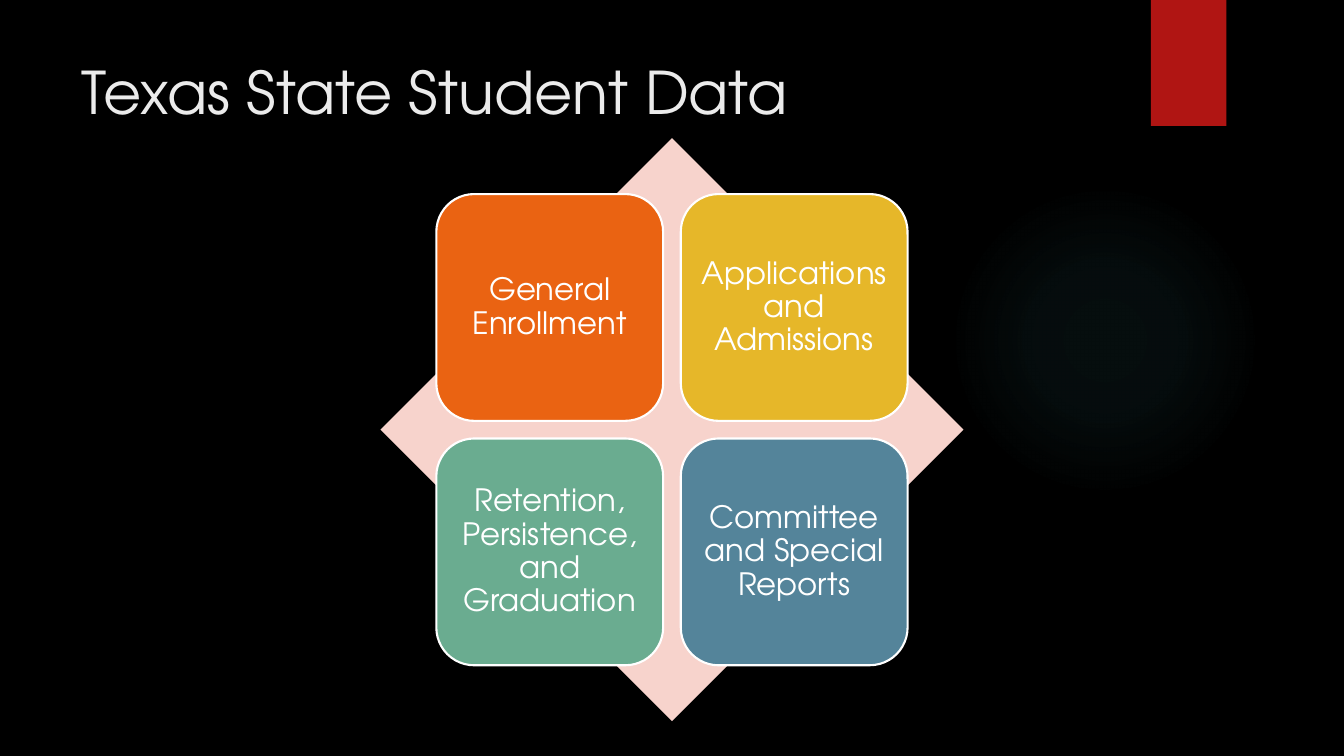
import lxml.etree
import pptx
import pptx.dml.color
import pptx.enum.shapes
import pptx.enum.text
import pptx.oxml
import pptx.oxml.ns
import pptx.util

COLUMNS, ROWS = 160, 90
SHAPES = pptx.enum.shapes.MSO_SHAPE


def color(hex_string):
    return pptx.dml.color.RGBColor.from_string(hex_string)


class SlideBuilder:
    font_name = "TeX Gyre Adventor"
    title_color = "EBEBEB"
    tile_text_color = "FFFFFF"

    def __init__(self, presentation, background):
        self.column = presentation.slide_width / COLUMNS
        self.row = presentation.slide_height / ROWS
        self.slide = presentation.slides.add_slide(presentation.slide_layouts[6])
        fill = self.slide.background.fill
        fill.solid()
        fill.fore_color.rgb = color(background)

    def place(self, left, top, width, height):
        return (
            round(left * self.column),
            round(top * self.row),
            round(width * self.column),
            round(height * self.row),
        )

    def style_text(self, paragraph, text, size, text_color):
        paragraph.text = text
        paragraph.font.name = self.font_name
        paragraph.font.size = pptx.util.Pt(size)
        paragraph.font.color.rgb = color(text_color)

    def shape(self, kind, left, top, width, height, fill_color):
        shape = self.slide.shapes.add_shape(kind, *self.place(left, top, width, height))
        shape.shadow.inherit = False
        shape.fill.solid()
        shape.fill.fore_color.rgb = color(fill_color)
        shape.line.fill.background()
        return shape

    def glow(self, left, top, size, glow_color, stops):
        shape = self.shape(SHAPES.OVAL, left, top, size, size, glow_color)
        stop_list = "".join(
            f'<a:gs pos="{position * 1000}"><a:srgbClr val="{glow_color}">'
            f'<a:alpha val="{opacity * 1000}"/></a:srgbClr></a:gs>'
            for position, opacity in stops
        )
        gradient = pptx.oxml.parse_xml(
            f'<a:gradFill {pptx.oxml.ns.nsdecls("a")}><a:gsLst>{stop_list}</a:gsLst>'
            '<a:path path="circle"><a:fillToRect l="50000" t="50000" r="50000" b="50000"/>'
            "</a:path></a:gradFill>"
        )
        properties = shape.element.spPr
        properties.replace(properties.find(pptx.oxml.ns.qn("a:solidFill")), gradient)

    def title(self, text, left, top, width, height):
        box = self.slide.shapes.add_textbox(*self.place(left, top, width, height))
        box.text_frame.word_wrap = True
        self.style_text(box.text_frame.paragraphs[0], text, 42, self.title_color)

    def tile(self, text, left, top, size, fill_color):
        shape = self.shape(SHAPES.ROUNDED_RECTANGLE, left, top, size, size, fill_color)
        shape.line.color.rgb = color("FFFFFF")
        shape.line.width = pptx.util.Pt(1.5)
        frame = shape.text_frame
        frame.word_wrap = True
        frame.vertical_anchor = pptx.enum.text.MSO_ANCHOR.MIDDLE
        inset = pptx.util.Inches(0.09)
        frame.margin_left = frame.margin_right = inset
        frame.margin_top = frame.margin_bottom = inset
        paragraph = frame.paragraphs[0]
        paragraph.alignment = pptx.enum.text.PP_ALIGN.CENTER
        paragraph.line_spacing = 0.9
        self.style_text(paragraph, text, 22, self.tile_text_color)

    def tile_matrix(self, tiles, center_x, center_y, tile_size, gap, diamond_size):
        self.shape(
            SHAPES.DIAMOND,
            center_x - diamond_size / 2,
            center_y - diamond_size / 2,
            diamond_size,
            diamond_size,
            "F7D3CC",
        )
        step = tile_size + gap
        left = center_x - step + gap / 2
        top = center_y - step + gap / 2
        for index, (text, fill_color) in enumerate(tiles):
            row, column = divmod(index, 2)
            self.tile(text, left + column * step, top + row * step, tile_size, fill_color)


def main():
    presentation = pptx.Presentation()
    presentation.slide_width = pptx.util.Inches(13.33)
    presentation.slide_height = pptx.util.Inches(7.5)

    builder = SlideBuilder(presentation, "000000")
    builder.glow(113, 22, 37, "50B9C1", [(0, 7), (36, 6), (69, 0)])
    builder.shape(SHAPES.RECTANGLE, 137, 0, 9, 15, "B01513")
    builder.title("Texas State Student Data", 8.5, 6, 123.5, 18.4)
    builder.tile_matrix(
        [
            ("General Enrollment", "EA6312"),
            ("Applications and Admissions", "E6B729"),
            ("Retention, Persistence, and Graduation", "6AAC90"),
            ("Committee and Special Reports", "54849A"),
        ],
        center_x=80,
        center_y=51.15,
        tile_size=27,
        gap=2.1,
        diamond_size=69.4,
    )
    presentation.save("out.pptx")


if __name__ == "__main__":
    main()
